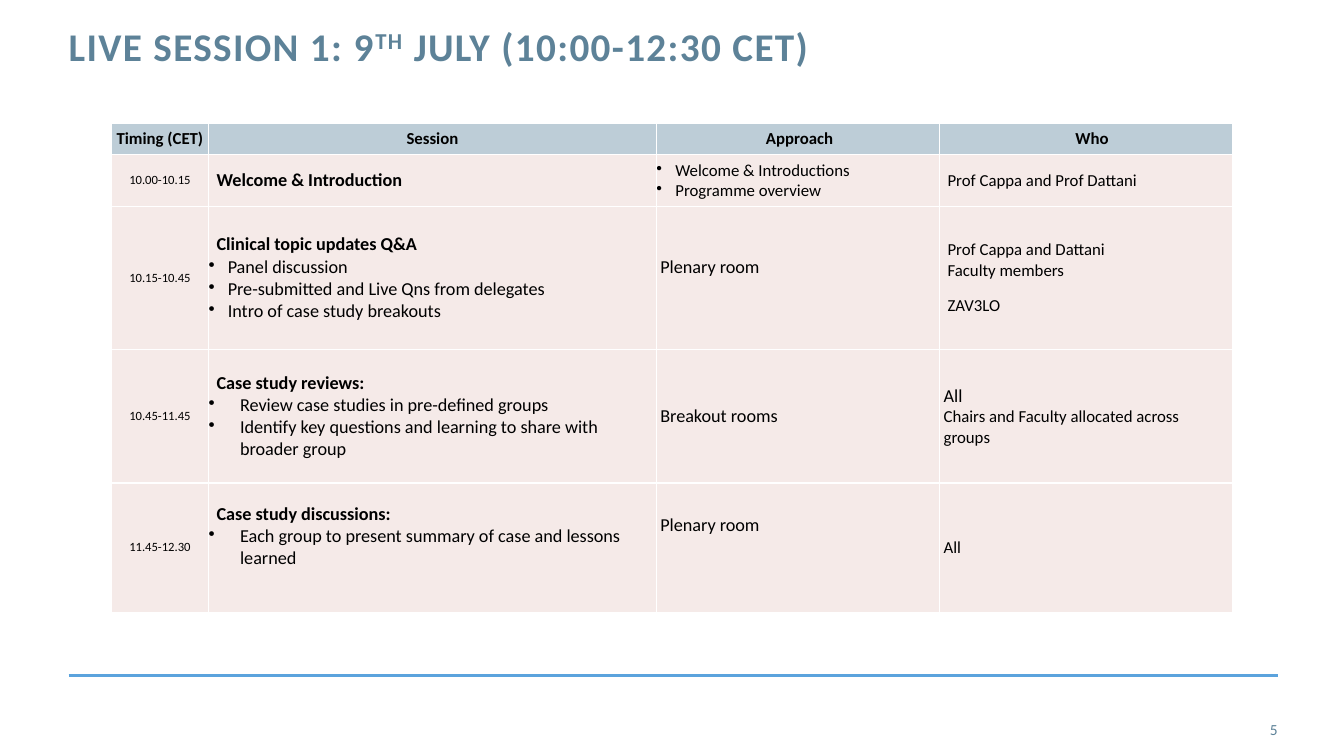
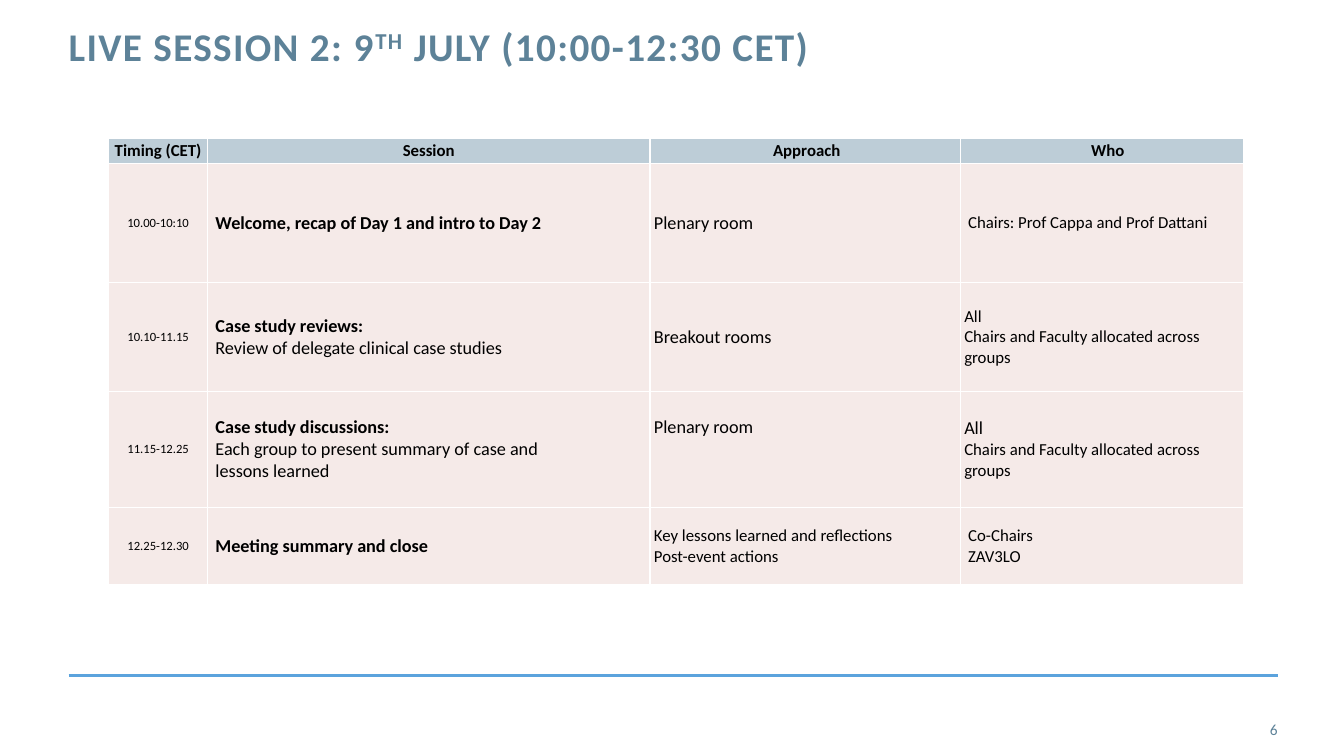
import pptx
import pptx.dml.color
import pptx.enum.shapes
import pptx.enum.text
import pptx.oxml
import pptx.oxml.ns
import pptx.oxml.xmlchemy
import pptx.util

Cm = pptx.util.Cm
Pt = pptx.util.Pt
RGBColor = pptx.dml.color.RGBColor
ALIGN = pptx.enum.text.PP_ALIGN
ANCHOR = pptx.enum.text.MSO_ANCHOR

SLATE = RGBColor(0x5D, 0x82, 0x98)
SKY = RGBColor(0x5B, 0xA3, 0xDD)
BLACK = RGBColor(0x00, 0x00, 0x00)
WHITE = RGBColor(0xFF, 0xFF, 0xFF)
HEADER_FILL = RGBColor(0xBD, 0xCD, 0xD7)
BODY_FILL = RGBColor(0xF5, 0xEA, 0xE8)

MARGINS = ("margin_left", "margin_top", "margin_right", "margin_bottom")

LINE_STYLES = {
    "header": {"size": 12, "bold": True, "centred": True},
    "approach header": {"size": 12, "bold": True, "centred": True, "indent": 0.08},
    "who header": {"size": 12, "bold": True, "centred": True, "indent": 0.29},
    "time": {"size": 9, "centred": True},
    "heading": {"size": 13, "bold": True, "indent": 0.2},
    "detail": {"size": 13, "indent": 0.2},
    "room": {"size": 13, "indent": 0.1},
    "raised room": {"size": 13, "indent": 0.1, "bottom": 0.52},
    "high room": {"size": 13, "indent": 0.1, "bottom": 1.12},
    "raised heading": {"size": 13, "bold": True, "indent": 0.2, "bottom": 0.56},
    "note": {"size": 12, "indent": 0.1},
    "person": {"size": 12, "indent": 0.2},
    "separate person": {"size": 12, "indent": 0.2, "before": 11},
    "topic": {"size": 12, "indent": 0.48, "bullet": True},
    "point": {"size": 13, "indent": 0.48, "bullet": True},
    "wide point": {"size": 13, "indent": 0.79, "bullet": True},
}

HEADER_ROW = [
    [("header", "Timing (CET)")],
    [("header", "Session")],
    [("approach header", "Approach")],
    [("who header", "Who")],
]
FACULTY = [
    ("note", "Chairs and Faculty allocated across"),
    ("note", "groups"),
]

SESSIONS = [
    {
        "number": 1, "page": 5, "left": 2.8, "top": 3.1,
        "columns": [2.46, 11.28, 7.14, 7.39],
        "heights": [0.8, 1.3, 3.61, 3.36, 3.26],
        "rows": [
            [
                [("time", "10.00-10.15")],
                [("heading", "Welcome & Introduction")],
                [("topic", "Welcome & Introductions"), ("topic", "Programme overview")],
                [("person", "Prof Cappa and Prof Dattani")],
            ],
            [
                [("time", "10.15-10.45")],
                [
                    ("heading", "Clinical topic updates Q&A"),
                    ("point", "Panel discussion"),
                    ("point", "Pre-submitted and Live Qns from delegates"),
                    ("point", "Intro of case study breakouts"),
                ],
                [("raised room", "Plenary room")],
                [
                    ("person", "Prof Cappa and Dattani"),
                    ("person", "Faculty members"),
                    ("separate person", "ZAV3LO"),
                ],
            ],
            [
                [("time", "10.45-11.45")],
                [
                    ("heading", "Case study reviews:"),
                    ("wide point", "Review case studies in pre-defined groups"),
                    ("wide point", "Identify key questions and learning to share with broader group"),
                ],
                [("room", "Breakout rooms")],
                [("room", "All")] + FACULTY,
            ],
            [
                [("time", "11.45-12.30")],
                [
                    ("raised heading", "Case study discussions:"),
                    ("wide point", "Each group to present summary of case and lessons learned"),
                ],
                [("high room", "Plenary room")],
                [("note", "All")],
            ],
        ],
    },
    {
        "number": 2, "page": 6, "left": 2.74, "top": 3.5,
        "columns": [2.49, 11.15, 7.82, 7.14],
        "heights": [0.62, 3, 2.74, 2.92, 1.96],
        "rows": [
            [
                [("time", "10.00-10:10")],
                [("heading", "Welcome, recap of Day 1 and intro to Day 2")],
                [("room", "Plenary room")],
                [("person", "Chairs: Prof Cappa and Prof Dattani")],
            ],
            [
                [("time", "10.10-11.15")],
                [
                    ("heading", "Case study reviews:"),
                    ("detail", "Review of delegate clinical case studies"),
                ],
                [("room", "Breakout rooms")],
                [("note", "All")] + FACULTY,
            ],
            [
                [("time", "11.15-12.25")],
                [
                    ("heading", "Case study discussions:"),
                    ("detail", "Each group to present summary of case and"),
                    ("detail", "lessons learned"),
                ],
                [("high room", "Plenary room")],
                [("room", "All")] + FACULTY,
            ],
            [
                [("time", "12.25-12.30")],
                [("heading", "Meeting summary and close")],
                [("note", "Key lessons learned and reflections"), ("note", "Post-event actions")],
                [("person", "Co-Chairs"), ("person", "ZAV3LO")],
            ],
        ],
    },
]


def set_values(target, values):
    for name, value in values.items():
        setattr(target, name, value)


class Deck:
    font_name = "Calibri"
    left = 1.73
    right = 32.2

    def __init__(self):
        self.presentation = pptx.Presentation()
        set_values(self.presentation, {"slide_width": Cm(33.87), "slide_height": Cm(19.05)})
        self.slide = None

    def add_slide(self):
        self.slide = self.presentation.slides.add_slide(self.presentation.slide_layouts[6])

    def add_run(self, paragraph, text, size, colour, bold=False):
        run = paragraph.add_run()
        run.text = text
        set_values(run.font, {"name": self.font_name, "size": Pt(size), "bold": bold})
        run.font.color.rgb = colour
        return run

    def add_text_box(self, left, top, width, height, anchor):
        shape = self.slide.shapes.add_textbox(Cm(left), Cm(top), Cm(width), Cm(height))
        frame = shape.text_frame
        set_values(frame, {"word_wrap": True, "vertical_anchor": anchor})
        set_values(frame, dict.fromkeys(MARGINS, 0))
        return frame.paragraphs[0]

    def add_title(self, number):
        paragraph = self.add_text_box(self.left, 0.69, 24.28, 2.24, ANCHOR.TOP)
        paragraph.line_spacing = Pt(30)
        pieces = [
            (f"LIVE SESSION {number}: 9", 0),
            ("TH", 30000),
            (" JULY (10:00-12:30 CET)", 0),
        ]
        for text, baseline in pieces:
            run = self.add_run(paragraph, text, 28, SLATE, True)
            properties = run._r.get_or_add_rPr()
            properties.set("spc", "100")
            properties.set("baseline", str(baseline))

    def add_footer(self, page):
        line = self.slide.shapes.add_connector(
            pptx.enum.shapes.MSO_CONNECTOR.STRAIGHT,
            Cm(self.left), Cm(17.02), Cm(self.right), Cm(17.02),
        )
        line.line.color.rgb = SKY
        line.line.width = Pt(2)
        line._element.spPr.append(pptx.oxml.xmlchemy.OxmlElement("a:effectLst"))
        paragraph = self.add_text_box(self.right - 2.2, 17.86, 2.2, 1.02, ANCHOR.MIDDLE)
        paragraph.alignment = ALIGN.RIGHT
        self.add_run(paragraph, str(page), 11, SLATE)

    def add_line(self, paragraph, style_name, text):
        style = LINE_STYLES[style_name]
        indent = Cm(style.get("indent", 0))
        properties = paragraph._p.get_or_add_pPr()
        properties.set("marL", str(indent))
        properties.set("indent", str(-indent if "bullet" in style else 0))
        if "bullet" in style:
            bullet = pptx.oxml.xmlchemy.OxmlElement("a:buChar")
            bullet.set("char", "•")
            properties.append(bullet)
        paragraph.alignment = ALIGN.CENTER if "centred" in style else ALIGN.LEFT
        if "before" in style:
            paragraph.space_before = Pt(style["before"])
        self.add_run(paragraph, text, style["size"], BLACK, style.get("bold", False))

    def add_borders(self, cell):
        properties = cell._tc.get_or_add_tcPr()
        for position, side in enumerate(("lnL", "lnR", "lnT", "lnB")):
            border = pptx.oxml.parse_xml(
                f'<a:{side} {pptx.oxml.ns.nsdecls("a")} w="{int(Pt(1))}"><a:solidFill>'
                f'<a:srgbClr val="{str(WHITE)}"/></a:solidFill></a:{side}>'
            )
            properties.insert(position, border)

    def fill_cell(self, cell, lines, colour):
        bottom = LINE_STYLES[lines[0][0]].get("bottom", 0)
        set_values(cell, dict.fromkeys(MARGINS, 0))
        set_values(cell, {"margin_bottom": Cm(bottom), "vertical_anchor": ANCHOR.MIDDLE})
        cell.fill.solid()
        cell.fill.fore_color.rgb = colour
        self.add_borders(cell)
        frame = cell.text_frame
        for index, (style_name, text) in enumerate(lines):
            paragraph = frame.add_paragraph() if index else frame.paragraphs[0]
            self.add_line(paragraph, style_name, text)

    def add_agenda(self, left, top, columns, heights, rows):
        table = self.slide.shapes.add_table(
            len(heights), len(columns),
            Cm(left), Cm(top), Cm(sum(columns)), Cm(sum(heights)),
        ).table
        table.horz_banding = False
        for column, width in zip(table.columns, columns):
            column.width = Cm(width)
        for row, height, contents in zip(table.rows, heights, [HEADER_ROW] + rows):
            row.height = Cm(height)
            colour = HEADER_FILL if contents is HEADER_ROW else BODY_FILL
            for cell, lines in zip(row.cells, contents):
                self.fill_cell(cell, lines, colour)


def main():
    deck = Deck()
    for session in SESSIONS:
        deck.add_slide()
        deck.add_footer(session["page"])
        deck.add_title(session["number"])
        deck.add_agenda(
            session["left"], session["top"],
            session["columns"], session["heights"], session["rows"],
        )
    deck.presentation.save("out.pptx")


if __name__ == "__main__":
    main()
